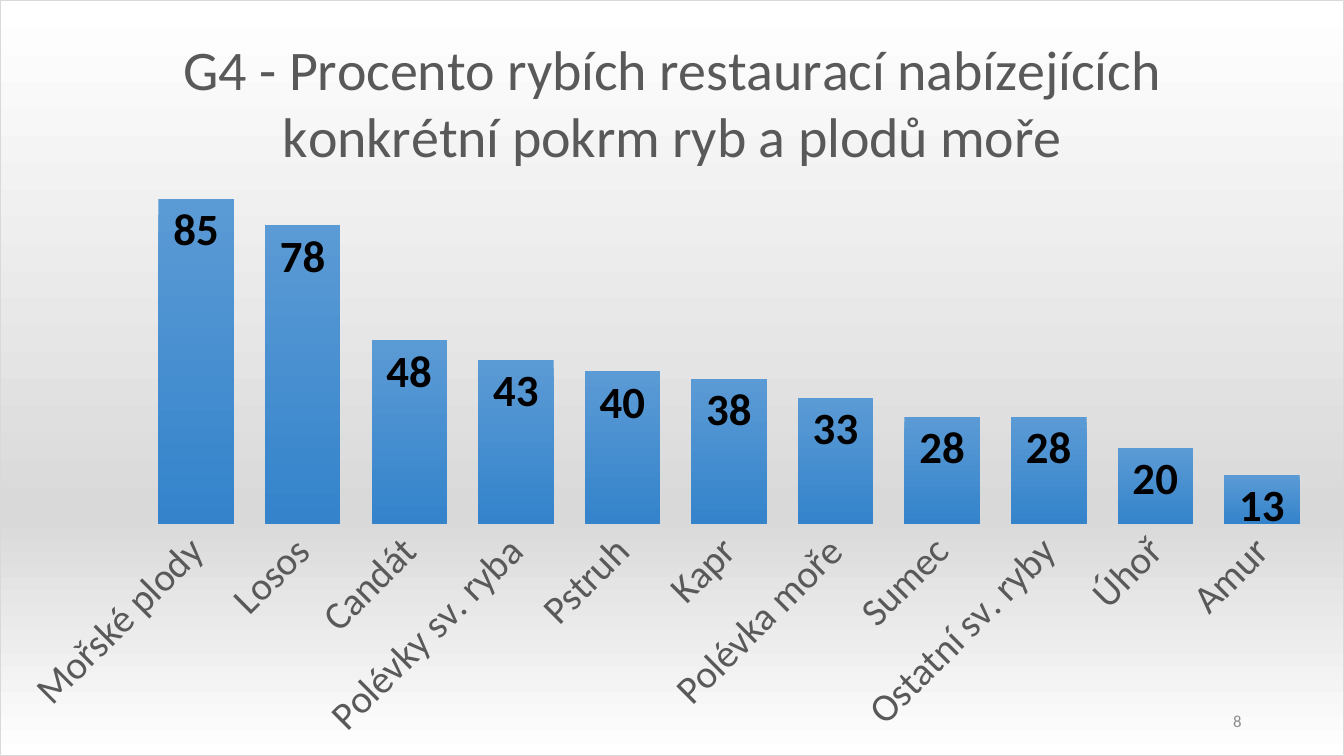
from dataclasses import dataclass

import lxml.etree
import pptx
import pptx.chart.data
import pptx.dml.color
import pptx.enum.chart
import pptx.enum.text
import pptx.oxml
import pptx.oxml.ns
import pptx.util

Pt = pptx.util.Pt


@dataclass
class Theme:
    font: str = "Calibri"
    text: str = "595959"
    label: str = "000000"
    number: str = "8C8C8C"
    border: str = "D9D9D9"
    background: tuple = ((0, "FFFFFF"), (68, "D9D9D9"), (100, "FFFFFF"))
    bar: tuple = ((0, "5B9BD5"), (100, "3483CB"))
    title_size: int = 40
    label_size: int = 32
    axis_size: int = 28
    number_size: int = 12


TITLE = "G4 - Procento rybích restaurací nabízejících konkrétní pokrm ryb a plodů moře"
DISHES = {
    "Mořské plody": 85, "Losos": 78, "Candát": 48, "Polévky sv. ryba": 43,
    "Pstruh": 40, "Kapr": 38, "Polévka moře": 33, "Sumec": 28,
    "Ostatní sv. ryby": 28, "Úhoř": 20, "Amur": 13,
}
PLOT_AREA = {"x": 0.106, "y": 0.237, "w": 0.873, "h": 0.457}


def set_values(target, values):
    for name, value in values.items():
        setattr(target, name, value)


def gradient_xml(stops):
    entries = "".join(
        f'<a:gs pos="{position * 1000}"><a:srgbClr val="{color}"/></a:gs>'
        for position, color in stops
    )
    return f'<a:gradFill><a:gsLst>{entries}</a:gsLst><a:lin ang="5400000" scaled="0"/></a:gradFill>'


def format_xml(stops, line):
    namespaces = pptx.oxml.ns.nsdecls("c", "a")
    return pptx.oxml.parse_xml(f"<c:spPr {namespaces}>{gradient_xml(stops)}{line}</c:spPr>")


class SlideBuilder:
    def __init__(self, presentation, theme):
        self.theme = theme
        self.slide = presentation.slides.add_slide(presentation.slide_layouts[6])

    def style_font(self, font, size, color, bold=False):
        set_values(font, {"name": self.theme.font, "size": Pt(size), "bold": bold})
        font.color.rgb = pptx.dml.color.RGBColor.from_string(color)

    def text(self, content, left, top, width, height):
        frame = self.slide.shapes.add_textbox(Pt(left), Pt(top), Pt(width), Pt(height)).text_frame
        set_values(frame, {"word_wrap": True, "vertical_anchor": pptx.enum.text.MSO_ANCHOR.MIDDLE})
        paragraph = frame.paragraphs[0]
        set_values(paragraph, {"text": content, "alignment": pptx.enum.text.PP_ALIGN.RIGHT})
        self.style_font(paragraph.runs[0].font, self.theme.number_size, self.theme.number)

    def column_chart(self, title, values, left, top, width, height):
        data = pptx.chart.data.CategoryChartData(number_format="0")
        data.categories = list(values)
        data.add_series("Series 1", list(values.values()))
        chart = self.slide.shapes.add_chart(
            pptx.enum.chart.XL_CHART_TYPE.COLUMN_CLUSTERED,
            Pt(left), Pt(top), Pt(width), Pt(height), data,
        ).chart
        chart.has_legend = False
        self.style_font(chart.font, 10, self.theme.label)
        self.chart_title(chart, title)
        self.chart_axes(chart)
        self.chart_bars(chart.plots[0])
        self.chart_area(chart)

    def chart_title(self, chart, title):
        chart.has_title = True
        chart.chart_title.include_in_layout = False
        paragraph = chart.chart_title.text_frame.paragraphs[0]
        paragraph.text = title
        self.style_font(paragraph.runs[0].font, self.theme.title_size, self.theme.text)

    def chart_axes(self, chart):
        tick_none = pptx.enum.chart.XL_TICK_MARK.NONE
        set_values(chart.value_axis, {
            "visible": False, "has_major_gridlines": False,
            "minimum_scale": 0, "maximum_scale": 90,
        })
        axis = chart.category_axis
        set_values(axis, {"major_tick_mark": tick_none, "minor_tick_mark": tick_none})
        axis.format.line.fill.background()
        self.style_font(axis.tick_labels.font, self.theme.axis_size, self.theme.text)
        axis._element.find(".//" + pptx.oxml.ns.qn("a:bodyPr")).set("rot", "-2700000")

    def chart_bars(self, plot):
        set_values(plot, {"gap_width": 41, "vary_by_categories": False, "has_data_labels": True})
        labels = plot.data_labels
        set_values(labels, {
            "show_value": True, "number_format": "0", "number_format_is_linked": False,
            "position": pptx.enum.chart.XL_LABEL_POSITION.INSIDE_END,
        })
        self.style_font(labels.font, self.theme.label_size, self.theme.label, True)
        properties = plot.series[0]._element.get_or_add_spPr()
        properties.getparent().replace(properties, format_xml(self.theme.bar, "<a:ln><a:noFill/></a:ln>"))

    def chart_area(self, chart):
        qn = pptx.oxml.ns.qn
        line = (
            f'<a:ln w="{Pt(0.75)}"><a:solidFill><a:srgbClr val="{self.theme.border}"/>'
            "</a:solidFill></a:ln>"
        )
        space = chart._chartSpace
        space.find(qn("c:chart")).addnext(format_xml(self.theme.background, line))
        plot_area = space.find(".//" + qn("c:plotArea"))
        layout = plot_area.find(qn("c:layout"))
        if layout is None:
            layout = lxml.etree.Element(qn("c:layout"))
            plot_area.insert(0, layout)
        manual = lxml.etree.SubElement(layout, qn("c:manualLayout"))
        settings = {"layoutTarget": "inner", "xMode": "edge", "yMode": "edge", **PLOT_AREA}
        for name, value in settings.items():
            lxml.etree.SubElement(manual, qn(f"c:{name}")).set("val", str(value))


def main():
    presentation = pptx.Presentation()
    set_values(presentation, {"slide_width": Pt(960), "slide_height": Pt(540)})
    builder = SlideBuilder(presentation, Theme())
    builder.column_chart(TITLE, DISHES, 0, 0, 960, 540)
    builder.text("8", 678, 500.5, 216, 28.8)
    presentation.save("out.pptx")


if __name__ == "__main__":
    main()
